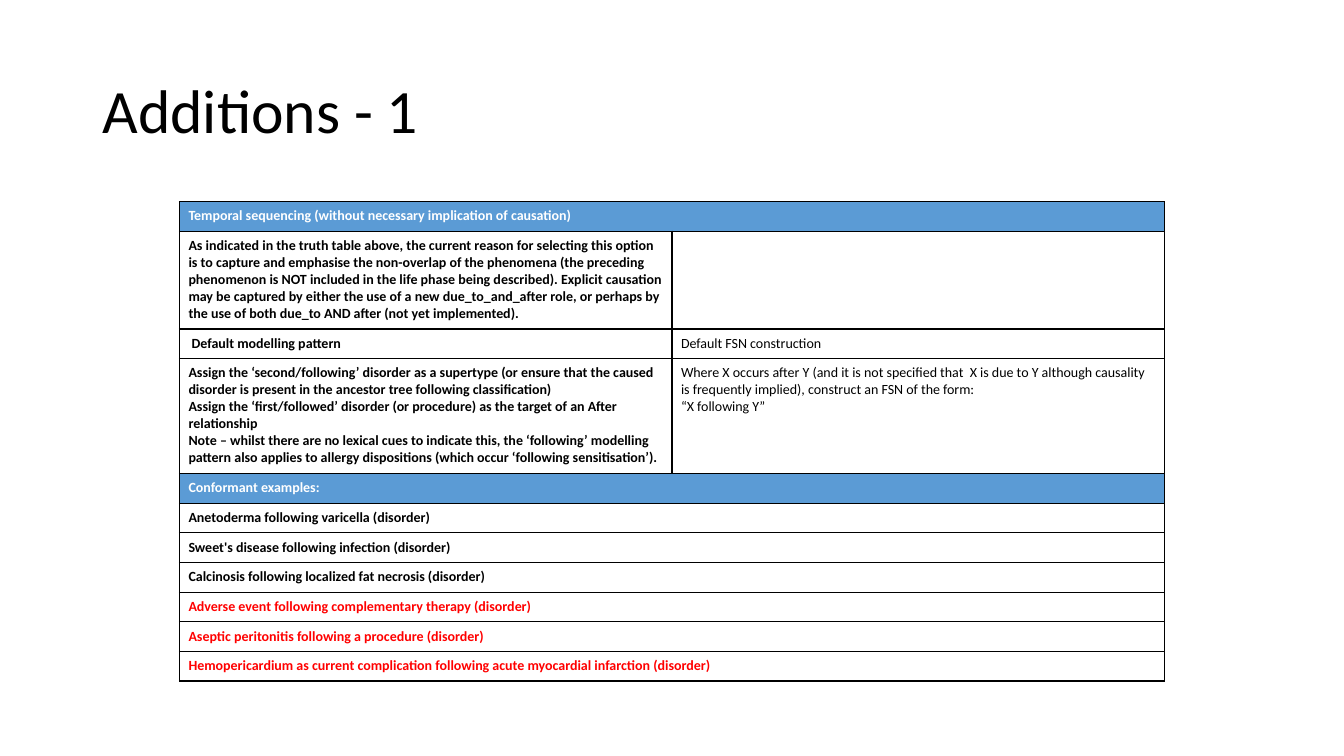
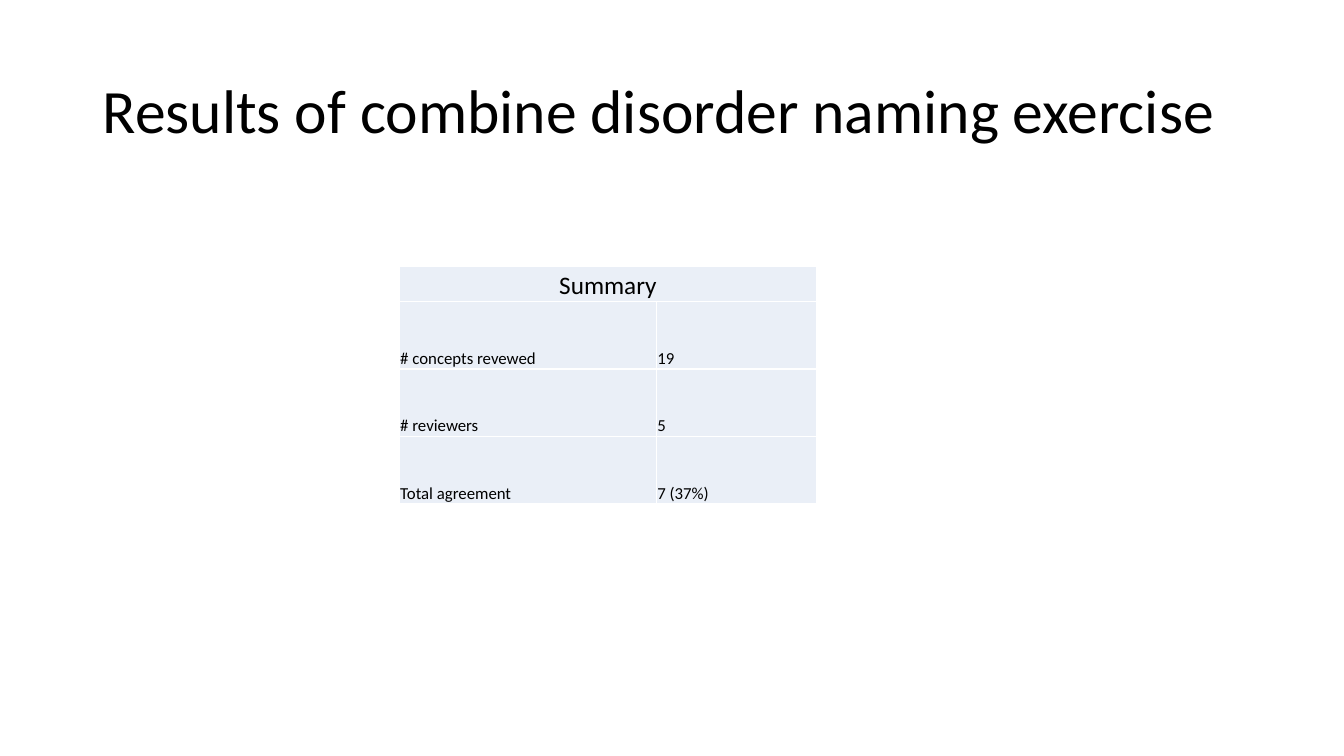
from dataclasses import dataclass

import pptx
import pptx.dml.color
import pptx.enum.text
import pptx.oxml
import pptx.oxml.ns
import pptx.util

Inches = pptx.util.Inches
Pt = pptx.util.Pt
ANCHOR = pptx.enum.text.MSO_ANCHOR
ALIGN = pptx.enum.text.PP_ALIGN


@dataclass(frozen=True)
class Theme:
    font: str = "Calibri"
    black: str = "000000"
    white: str = "FFFFFF"
    red: str = "FF0000"
    header_blue: str = "5B9BD5"
    pale_blue: str = "EAEFF7"
    title_size: int = 44
    pattern_size: int = 10
    summary_head_size: int = 18
    summary_size: int = 12
    border_width: int = 1


THEME = Theme()


@dataclass(frozen=True)
class CellStyle:
    size: int
    color: str = THEME.black
    bold: bool = False
    fill: str | None = None
    align: ALIGN = ALIGN.LEFT


@dataclass(frozen=True)
class Cell:
    """Text of one cell, one paragraph per line."""
    text: str
    style: CellStyle


@dataclass(frozen=True)
class Row:
    """A row with a single cell spans every column."""
    height: float
    cells: tuple[Cell, ...]


@dataclass(frozen=True)
class TableLayout:
    left: float
    top: float
    widths: tuple[float, ...]
    margins: tuple[float, float, float, float]
    anchor: ANCHOR
    border: str


BAND = CellStyle(THEME.pattern_size, THEME.white, True, THEME.header_blue)
STRONG = CellStyle(THEME.pattern_size, bold=True)
PLAIN = CellStyle(THEME.pattern_size)
NEW = CellStyle(THEME.pattern_size, THEME.red, True)
SUMMARY_HEAD = CellStyle(THEME.summary_head_size, fill=THEME.pale_blue, align=ALIGN.CENTER)
SUMMARY = CellStyle(THEME.summary_size, fill=THEME.pale_blue)

PATTERN_HEIGHT = 4.76
REASON_HEIGHT = 0.97
RULES_HEIGHT = 1.14
LINE_HEIGHT = (PATTERN_HEIGHT - REASON_HEIGHT - RULES_HEIGHT) / 9
SUMMARY_HEIGHT = 0.67

PATTERN_LAYOUT = TableLayout(1.78, 2, (9.77 / 2,) * 2, (0.09, 0.06, 0.09, 0.06),
                             ANCHOR.TOP, THEME.black)
SUMMARY_LAYOUT = TableLayout(3.96, 2.64, (2.55, 1.59), (0.01, 0.01, 0.01, 0),
                             ANCHOR.BOTTOM, THEME.white)

REASON = (
    "As indicated in the truth table above, the current reason for selecting this option "
    "is to capture and emphasise the non-overlap of the phenomena (the preceding phenomenon "
    "is NOT included in the life phase being described). Explicit causation may be captured "
    "by either the use of a new due_to_and_after role, or perhaps by the use of both due_to "
    "AND after (not yet implemented)."
)
MODELLING_RULES = "\n".join((
    "Assign the ‘second/following’ disorder as a supertype (or ensure that the caused "
    "disorder is present in the ancestor tree following classification)",
    "Assign the ‘first/followed’ disorder (or procedure) as the target of an After relationship",
    "Note – whilst there are no lexical cues to indicate this, the ‘following’ modelling "
    "pattern also applies to allergy dispositions (which occur ‘following sensitisation’).",
))
NAMING_RULES = "\n".join((
    "Where X occurs after Y (and it is not specified that  X is due to Y although causality "
    "is frequently implied), construct an FSN of the form:",
    "“X following Y”",
))
EXAMPLES = (
    ("Anetoderma following varicella (disorder)", STRONG),
    ("Sweet's disease following infection (disorder)", STRONG),
    ("Calcinosis following localized fat necrosis (disorder)", STRONG),
    ("Adverse event following complementary therapy (disorder)", NEW),
    ("Aseptic peritonitis following a procedure (disorder)", NEW),
    ("Hemopericardium as current complication following acute myocardial infarction (disorder)",
     NEW),
)
RESULTS = (("# concepts revewed", "19"), ("# reviewers", "5"), ("Total agreement", "7 (37%)"))

PATTERN_ROWS = (
    Row(LINE_HEIGHT,
        (Cell("Temporal sequencing (without necessary implication of causation)", BAND),)),
    Row(REASON_HEIGHT, (Cell(REASON, STRONG), Cell("", PLAIN))),
    Row(LINE_HEIGHT, (Cell(" Default modelling pattern", STRONG),
                      Cell("Default FSN construction", PLAIN))),
    Row(RULES_HEIGHT, (Cell(MODELLING_RULES, STRONG), Cell(NAMING_RULES, PLAIN))),
    Row(LINE_HEIGHT, (Cell("Conformant examples:", BAND),)),
    *(Row(LINE_HEIGHT, (Cell(text, style),)) for text, style in EXAMPLES),
)
SUMMARY_ROWS = (
    Row(0.35, (Cell("Summary", SUMMARY_HEAD),)),
    *(Row(SUMMARY_HEIGHT, tuple(Cell(text, SUMMARY) for text in pair)) for pair in RESULTS),
)


def rgb(color: str) -> pptx.dml.color.RGBColor:
    return pptx.dml.color.RGBColor.from_string(color)


def set_font(p, size: int, color: str, bold: bool = False) -> None:
    p.font.name = THEME.font
    p.font.size = Pt(size)
    p.font.bold = bold
    p.font.color.rgb = rgb(color)


def add_title_slide(prs, title: str):
    """Add a blank slide carrying the shared title style."""
    s = prs.slides.add_slide(prs.slide_layouts[6])
    sp = s.shapes.add_textbox(Inches(0.92), Inches(0.4), Inches(11.5), Inches(1.45))
    tf = sp.text_frame
    tf.word_wrap = True
    tf.vertical_anchor = ANCHOR.MIDDLE
    p = tf.paragraphs[0]
    p.text = title
    p.line_spacing = 0.9
    set_font(p, THEME.title_size, THEME.black)
    return s


def set_borders(cell, color: str) -> None:
    """Line all four sides; call before setting the fill, which must follow in the XML."""
    tc_pr = cell._tc.get_or_add_tcPr()
    for side in "LRTB":
        tc_pr.append(pptx.oxml.parse_xml(
            f'<a:ln{side} {pptx.oxml.ns.nsdecls("a")} w="{Pt(THEME.border_width)}">'
            f'<a:solidFill><a:srgbClr val="{color}"/></a:solidFill></a:ln{side}>'))


def format_cell(cell, style: CellStyle, layout: TableLayout) -> None:
    set_borders(cell, layout.border)
    if style.fill:
        cell.fill.solid()
        cell.fill.fore_color.rgb = rgb(style.fill)
    else:
        cell.fill.background()
    cell.vertical_anchor = layout.anchor
    (cell.margin_left, cell.margin_top,
     cell.margin_right, cell.margin_bottom) = map(Inches, layout.margins)
    for p in cell.text_frame.paragraphs:
        p.alignment = style.align
        set_font(p, style.size, style.color, style.bold)


def add_table(s, layout: TableLayout, rows: tuple[Row, ...]) -> None:
    columns = len(layout.widths)
    table = s.shapes.add_table(
        len(rows), columns, Inches(layout.left), Inches(layout.top),
        Inches(sum(layout.widths)), Inches(sum(row.height for row in rows))).table
    table.first_row = table.horz_banding = False
    for column, width in zip(table.columns, layout.widths):
        column.width = Inches(width)
    for i, row in enumerate(rows):
        table.rows[i].height = Inches(row.height)
        if len(row.cells) == 1:
            table.cell(i, 0).merge(table.cell(i, columns - 1))
        for j, content in enumerate(row.cells):
            table.cell(i, j).text = content.text
        for j in range(columns):
            content = row.cells[min(j, len(row.cells) - 1)]
            format_cell(table.cell(i, j), content.style, layout)


def main() -> None:
    prs = pptx.Presentation()
    prs.slide_width = Inches(13.33)
    prs.slide_height = Inches(7.5)
    add_table(add_title_slide(prs, "Additions - 1"), PATTERN_LAYOUT, PATTERN_ROWS)
    add_table(add_title_slide(prs, "Results of combine disorder naming exercise"),
              SUMMARY_LAYOUT, SUMMARY_ROWS)
    prs.save("out.pptx")


if __name__ == "__main__":
    main()
